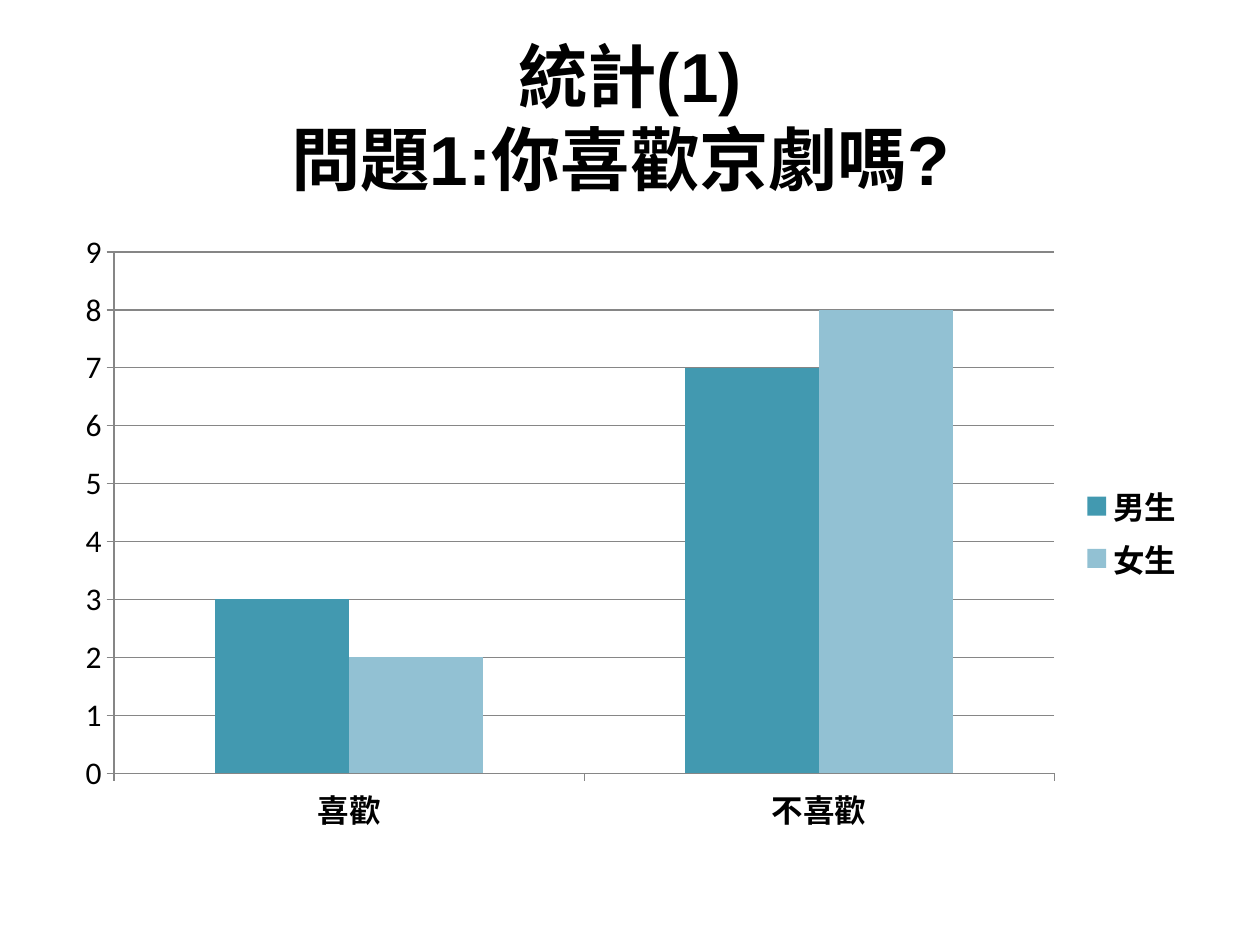
from lxml import etree
from pptx import Presentation
from pptx.chart.data import CategoryChartData
from pptx.dml.color import RGBColor
from pptx.enum.chart import XL_CHART_TYPE, XL_LEGEND_POSITION, XL_TICK_MARK
from pptx.enum.text import MSO_ANCHOR, PP_ALIGN
from pptx.oxml.ns import qn
from pptx.util import Inches, Pt

COLUMN = XL_CHART_TYPE.COLUMN_CLUSTERED
RIGHT = XL_LEGEND_POSITION.RIGHT
OUTSIDE, NO_TICK = XL_TICK_MARK.OUTSIDE, XL_TICK_MARK.NONE
MIDDLE, CENTER = MSO_ANCHOR.MIDDLE, PP_ALIGN.CENTER

CATEGORIES = ["喜歡", "不喜歡"]
SERIES = [("男生", (3, 7), "4299B0"), ("女生", (2, 8), "92C1D3")]


def rgb(value):
    """Return the colour for a hex string."""
    return RGBColor.from_string(value)


def style_font(font, name, size, bold):
    """Set a black font of the given face, size and weight."""
    font.name, font.size, font.bold = name, Pt(size), bold
    font.color.rgb = rgb("000000")


def style_line(line):
    """Give an axis or gridline its thin grey stroke."""
    line.color.rgb = rgb("868686")
    line.width = Pt(0.75)


def fill_chart(chart, color, opacity):
    """Fill the chart area with a colour at the given opacity in percent."""
    sp_pr = etree.Element(qn("c:spPr"))
    fill = etree.SubElement(sp_pr, qn("a:solidFill"))
    clr = etree.SubElement(fill, qn("a:srgbClr"), val=color)
    etree.SubElement(clr, qn("a:alpha"), val=str(opacity * 1000))
    line = etree.SubElement(sp_pr, qn("a:ln"))
    etree.SubElement(line, qn("a:noFill"))
    chart.element.find(qn("c:chart")).addnext(sp_pr)


def add_title(s, text, x, y, w, h):
    """Place and format the slide title in the given box."""
    sp = s.shapes.title
    sp.left, sp.top, sp.width, sp.height = map(Inches, (x, y, w, h))
    tf = sp.text_frame
    tf.word_wrap = True
    tf.vertical_anchor = MIDDLE
    p = tf.paragraphs[0]
    p.text = text
    p.alignment = CENTER
    style_font(p.font, "Arial", 39.6, True)


def add_survey_chart(s, x, y, w, h):
    """Draw the answers by gender as clustered columns in the given box."""
    data = CategoryChartData()
    data.categories = CATEGORIES
    for name, values, _ in SERIES:
        data.add_series(name, values)
    chart = s.shapes.add_chart(COLUMN, *map(Inches, (x, y, w, h)), data).chart
    chart.has_title = False
    style_font(chart.font, "Calibri", 18, False)
    fill_chart(chart, "FFFFFF", 76)

    plot = chart.plots[0]
    plot.gap_width, plot.overlap = 150, 0
    plot.vary_by_categories = False
    for series, (_, _, color) in zip(plot.series, SERIES):
        series.format.fill.solid()
        series.format.fill.fore_color.rgb = rgb(color)

    for axis in (chart.category_axis, chart.value_axis):
        axis.major_tick_mark, axis.minor_tick_mark = OUTSIDE, NO_TICK
        style_line(axis.format.line)
    style_font(chart.category_axis.tick_labels.font, "Calibri", 18, True)
    axis = chart.value_axis
    axis.minimum_scale, axis.maximum_scale, axis.major_unit = 0, 9, 1
    axis.has_major_gridlines = True
    style_line(axis.major_gridlines.format.line)

    chart.has_legend = True
    chart.legend.position = RIGHT
    chart.legend.include_in_layout = False
    style_font(chart.legend.font, "Calibri", 18, True)


def main():
    """Build and save the slide."""
    prs = Presentation()
    prs.slide_width, prs.slide_height = Inches(10), Inches(7.5)
    s = prs.slides.add_slide(prs.slide_layouts[5])
    add_title(s, "統計(1)\v問題1:你喜歡京劇嗎? ", 0.5, 0.3, 9, 1.25)
    add_survey_chart(s, 0.5, 1.75, 9, 4.95)
    prs.save("out.pptx")


if __name__ == "__main__":
    main()
